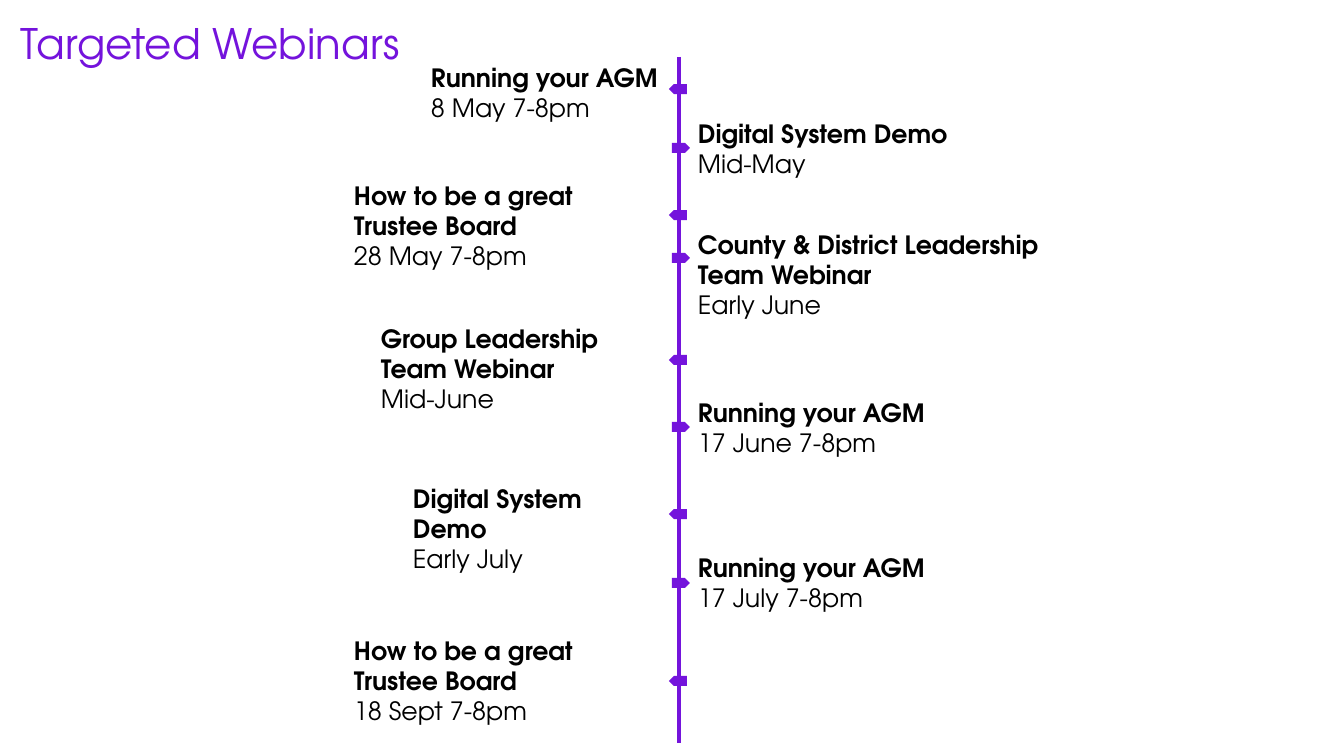
import pptx
import pptx.util
import pptx.dml.color
import pptx.enum.shapes
import pptx.enum.text
import pptx.oxml.ns
import lxml.etree

TITLE = "Targeted Webinars"
WEBINARS = [
    # side, top, width, title lines, marker top, title, date
]
WEBINARS = [
    ("left", 57, 250, 1, 84, "Running your AGM", "8 May 7-8pm"),
    ("right", 113, 310, 1, 143, "Digital System Demo", "Mid-May"),
    ("left", 175, 327, 2, 210, "How to be a great Trustee Board", "28 May 7-8pm"),
    ("right", 224, 433, 2, 253, "County & District Leadership Team Webinar", "Early June"),
    ("left", 318, 300, 2, 355, "Group Leadership Team Webinar", "Mid-June"),
    ("right", 392, 250, 1, 422, "Running your AGM", "17 June 7-8pm"),
    ("left", 478, 268, 2, 509, "Digital System Demo", "Early July"),
    ("right", 547, 250, 1, 578, "Running your AGM", "17 July 7-8pm"),
    ("left", 630, 327, 2, 676, "How to be a great Trustee Board", "18 Sept 7-8pm"),
]
COLORS = {"title": "7413DC", "timeline": "7414DC", "text": "000000"}
FONT = "TeX Gyre Adventor"
LEFT_COLUMN_END = 670
RIGHT_COLUMN_START = 687
LINE_X, LINE_TOP, LINE_END = 679, 57, 743
MARKER_X = {"left": 669, "right": 672}
MARKER_W, MARKER_H = 18, 10
LINE_HEIGHT, BOX_PADDING = 30, 12


def px(n):
    return pptx.util.Emu(round(n * 914400 / 100.8))


def rgb(name):
    return pptx.dml.color.RGBColor.from_string(COLORS[name])


def add_text(slide, box, lines, size, color, indent=10):
    sp = slide.shapes.add_textbox(*map(px, box))
    tf = sp.text_frame
    tf.word_wrap = True
    tf.auto_size = pptx.enum.text.MSO_AUTO_SIZE.SHAPE_TO_FIT_TEXT
    tf.margin_left = px(indent)
    for i, (text, bold) in enumerate(lines):
        p = tf.paragraphs[0] if i == 0 else tf.add_paragraph()
        r = p.add_run()
        r.text = text
        r.font.name = FONT
        r.font.size = pptx.util.Pt(size)
        r.font.bold = bold
        r.font.color.rgb = rgb(color)


def add_timeline(slide):
    line = slide.shapes.add_connector(
        pptx.enum.shapes.MSO_CONNECTOR.STRAIGHT,
        px(LINE_X), px(LINE_TOP), px(LINE_X), px(LINE_END))
    line.line.color.rgb = rgb("timeline")
    line.line.width = pptx.util.Pt(3)
    lxml.etree.SubElement(line._element.spPr, pptx.oxml.ns.qn("a:effectLst"))


def add_marker(slide, side, top):
    sp = slide.shapes.add_shape(
        pptx.enum.shapes.MSO_SHAPE.PENTAGON,
        px(MARKER_X[side]), px(top), px(MARKER_W), px(MARKER_H))
    sp.shadow.inherit = False
    sp.fill.solid()
    sp.fill.fore_color.rgb = rgb("timeline")
    sp.line.fill.background()
    if side == "left":
        sp.rotation = 180


def main():
    prs = pptx.Presentation()
    prs.slide_width, prs.slide_height = px(1344), px(756)
    slide = prs.slides.add_slide(prs.slide_layouts[6])
    add_timeline(slide)
    for side, top, width, title_lines, marker_top, title, date in WEBINARS:
        left = LEFT_COLUMN_END - width if side == "left" else RIGHT_COLUMN_START
        height = (title_lines + 1) * LINE_HEIGHT + BOX_PADDING
        add_text(slide, (left, top, width, height),
                 [(title, True), (date, False)], 18, "text", indent=11)
        add_marker(slide, side, marker_top)
    add_text(slide, (11, 13, 414, 61), [(TITLE, False)], 30, "title")
    prs.save("out.pptx")


if __name__ == "__main__":
    main()
